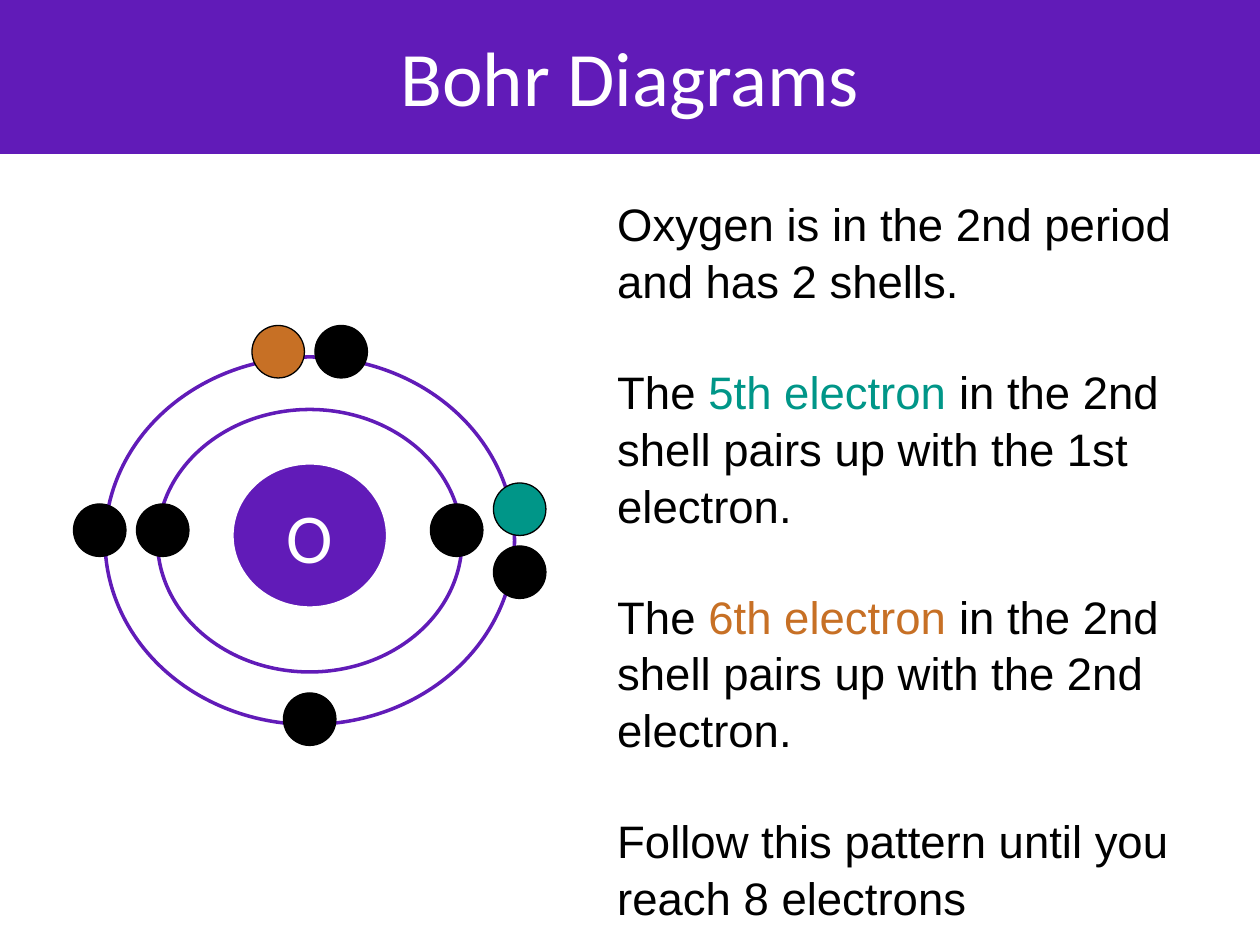
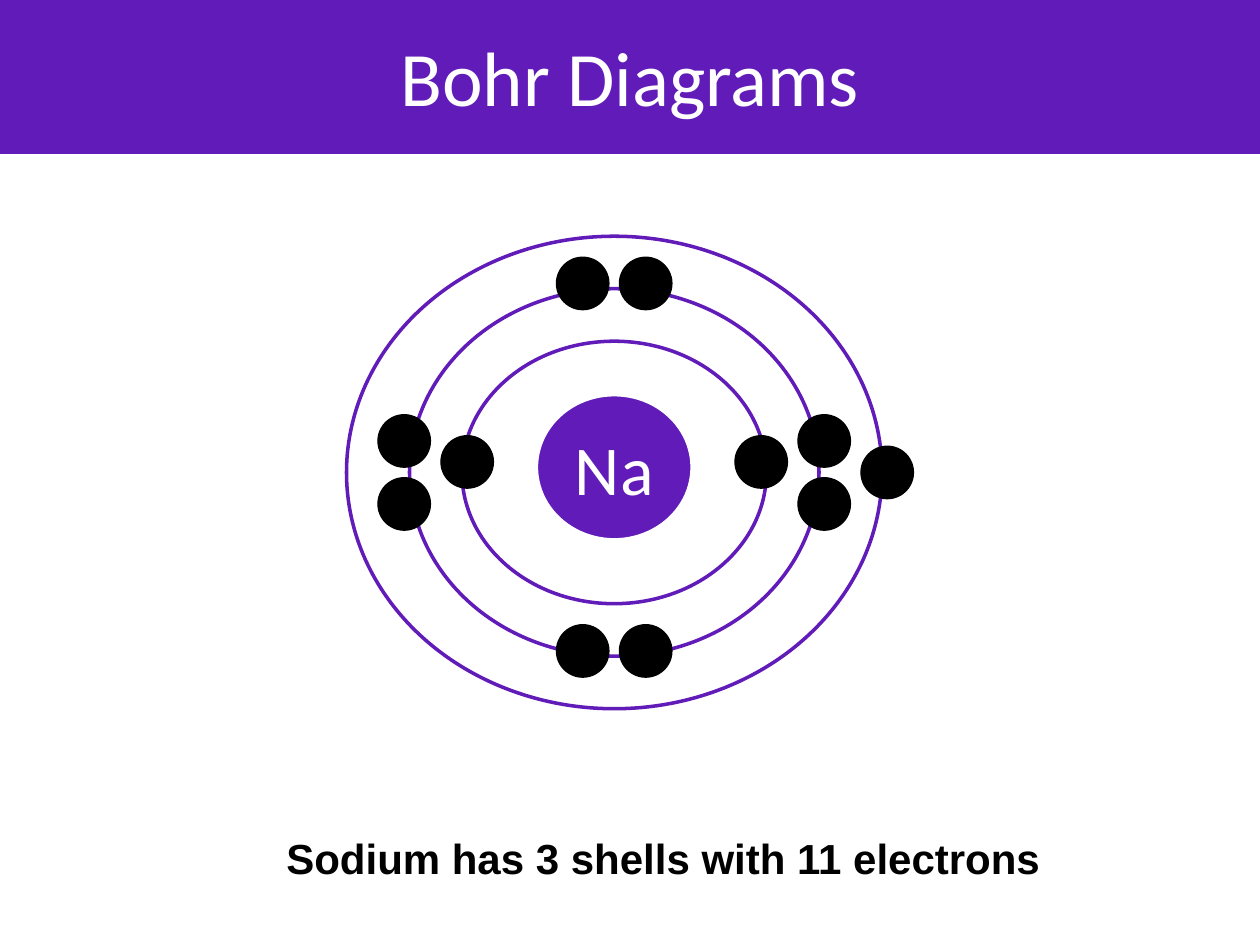
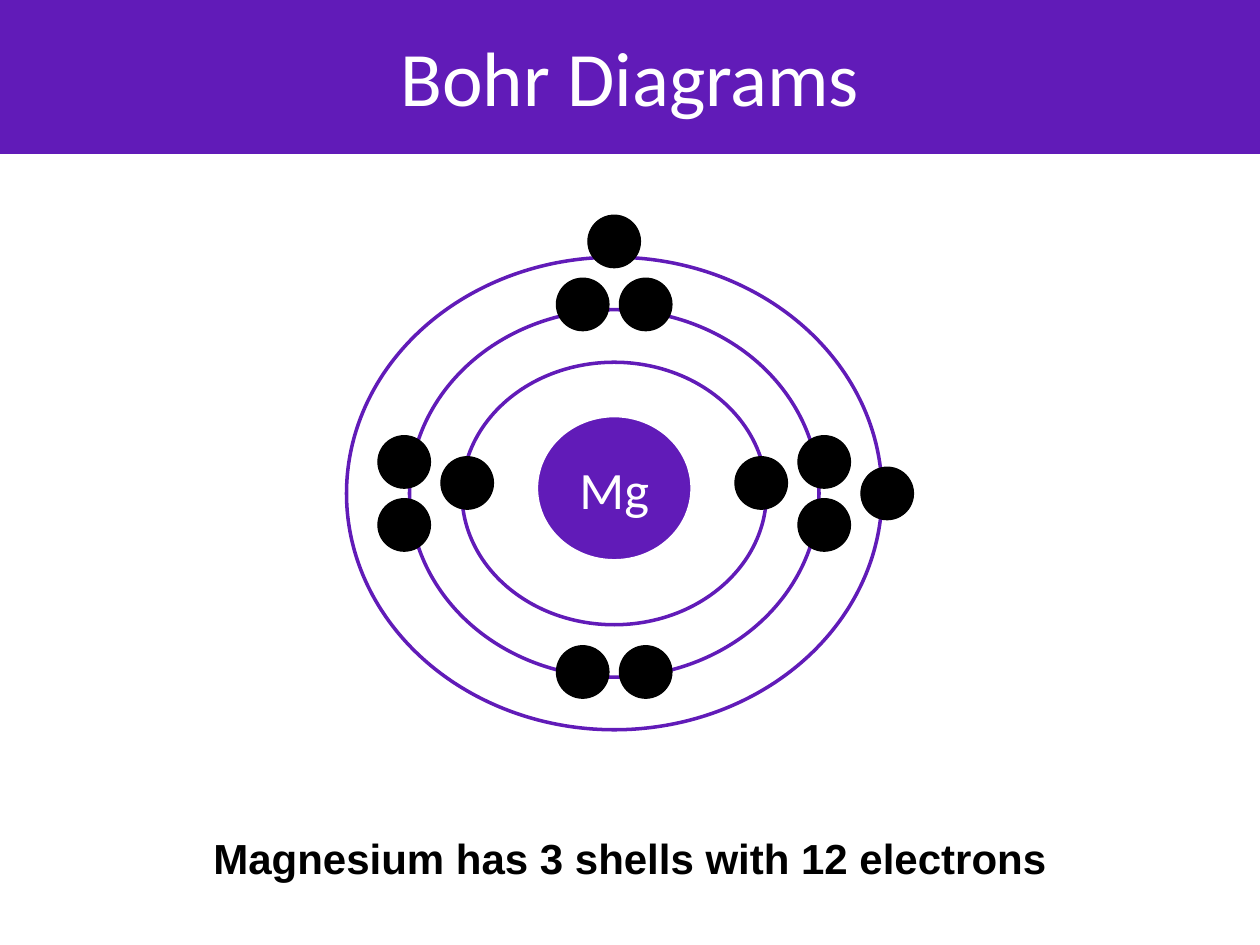
from dataclasses import dataclass
from typing import NamedTuple

from lxml.etree import SubElement
from pptx import Presentation
from pptx.dml.color import RGBColor
from pptx.enum.shapes import MSO_SHAPE
from pptx.enum.text import MSO_ANCHOR, MSO_AUTO_SIZE, PP_ALIGN
from pptx.oxml.ns import qn
from pptx.util import Pt

COLORS = {
    "purple": "611BB8",
    "white": "FFFFFF",
    "black": "000000",
    "teal": "009688",
    "orange": "C77025",
}
TITLE_AND_BODY, TITLE_ONLY = 1, 5
ELECTRON_SIZE = 30
NUCLEUS_LIFT = 3


class Box(NamedTuple):
    left: float
    top: float
    width: float
    height: float


class Span(NamedTuple):
    text: str
    color: str = "black"


class Electron(NamedTuple):
    across: float
    down: float
    color: str = "black"


class Shell(NamedTuple):
    width: float
    height: float


@dataclass
class Atom:
    symbol: str
    symbol_size: float
    center: tuple[float, float]
    shell_count: int
    electrons: list[Electron]


@dataclass
class AtomPage:
    atom: Atom
    caption: str
    caption_box: Box


TITLE_BOX = Box(0, -2, 720, 90)
BODY_BOX = Box(345.5, 102, 361, 417)
SHELLS = [Shell(174, 150), Shell(234, 210), Shell(306, 270)]
NUCLEUS = Shell(90, 84)

FIRST_SHELL = [Electron(84, -6), Electron(-84, -6)]
FULL_SECOND_SHELL = [
    Electron(120, -18), Electron(-18, -108), Electron(-120, -18), Electron(-18, 102),
    Electron(120, 18), Electron(18, -108), Electron(-120, 18), Electron(18, 102),
]
OXYGEN = Atom("O", 40, (177, 309), 2, FIRST_SHELL + [
    Electron(120, -18, "teal"), Electron(-18, -108, "orange"), Electron(-120, -6),
    Electron(0, 102), Electron(120, 18), Electron(18, -108),
])
SODIUM = Atom("Na", 40, (351, 270), 3, FIRST_SHELL + FULL_SECOND_SHELL + [Electron(156, 0)])
MAGNESIUM = Atom("Mg", 30, (351, 282), 3,
                 FIRST_SHELL + FULL_SECOND_SHELL + [Electron(0, -144), Electron(156, 0)])

OXYGEN_TEXT = [
    [Span("Oxygen is in the 2nd period and has 2 shells.")],
    [Span("The "), Span("5th electron", "teal"),
     Span(" in the 2nd shell pairs up with the 1st electron.")],
    [Span("The "), Span("6th electron", "orange"),
     Span(" in the 2nd shell pairs up with the 2nd electron.")],
    [Span("Follow this pattern until you reach 8 electrons")],
]
ATOM_PAGES = [
    AtomPage(SODIUM, "Sodium has 3 shells with 11 electrons", Box(139, 465, 480, 50)),
    AtomPage(MAGNESIUM, "Magnesium has 3 shells with 12 electrons", Box(36, 465, 648, 50)),
]


def rgb(name: str) -> RGBColor:
    return RGBColor.from_string(COLORS[name])


def place(shape, box: Box) -> None:
    shape.left, shape.top, shape.width, shape.height = (Pt(length) for length in box)


def write_text(shape, paragraphs: list[list[Span]], *, size: float, font: str = "Arial",
               bold: bool = False, align=PP_ALIGN.CENTER, anchor=MSO_ANCHOR.MIDDLE,
               margin: float = 7.2, top_margin: float = 7.2, gap: float = 0,
               line_spacing: float = 1.0) -> None:
    frame = shape.text_frame
    frame.word_wrap = True
    frame.auto_size = MSO_AUTO_SIZE.NONE
    frame.vertical_anchor = anchor
    frame.margin_left = frame.margin_right = Pt(7.2)
    frame.margin_top, frame.margin_bottom = Pt(top_margin), Pt(margin)
    for index, spans in enumerate(paragraphs):
        para = frame.add_paragraph() if index else frame.paragraphs[0]
        para.alignment = align
        para.line_spacing = line_spacing
        para.space_before = Pt(gap if index else 0)
        for text, color in spans:
            run = para.add_run()
            run.text = text
            run.font.size = Pt(size)
            run.font.name = font
            run.font.bold = bold
            run.font.color.rgb = rgb(color)


def remove_bullets(shape) -> None:
    for para in shape.text_frame.paragraphs:
        properties = para._p.get_or_add_pPr()
        properties.set("marL", "0")
        properties.set("indent", "0")
        SubElement(properties, qn("a:buNone"))


def add_ellipse(page, center: tuple[float, float], size: Shell, *, fill: str,
                line: str, line_width: float):
    across, down = center
    box = Box(across - size.width / 2, down - size.height / 2, size.width, size.height)
    ellipse = page.shapes.add_shape(MSO_SHAPE.OVAL, *(Pt(length) for length in box))
    ellipse.shadow.inherit = False
    ellipse.fill.solid()
    ellipse.fill.fore_color.rgb = rgb(fill)
    ellipse.line.color.rgb = rgb(line)
    ellipse.line.width = Pt(line_width)
    return ellipse


def draw_atom(page, atom: Atom) -> None:
    across, down = atom.center
    for shell in reversed(SHELLS[:atom.shell_count]):
        add_ellipse(page, atom.center, shell, fill="white", line="purple", line_width=2)
    nucleus = add_ellipse(page, (across, down - NUCLEUS_LIFT), NUCLEUS,
                          fill="purple", line="white", line_width=3)
    write_text(nucleus, [[Span(atom.symbol, "white")]], size=atom.symbol_size,
               font="Calibri", margin=3.6, top_margin=3.6)
    for electron in atom.electrons:
        add_ellipse(page, (across + electron.across, down + electron.down),
                    Shell(ELECTRON_SIZE, ELECTRON_SIZE),
                    fill=electron.color, line="black", line_width=0.75)


def add_page(deck, layout: int):
    page = deck.slides.add_slide(deck.slide_layouts[layout])
    title = page.shapes.title
    place(title, TITLE_BOX)
    title.fill.solid()
    title.fill.fore_color.rgb = rgb("purple")
    write_text(title, [[Span("Bohr Diagrams", "white")]], size=44, font="Calibri")
    return page


def add_oxygen_page(deck) -> None:
    page = add_page(deck, TITLE_AND_BODY)
    draw_atom(page, OXYGEN)
    body = page.placeholders[1]
    place(body, BODY_BOX)
    write_text(body, OXYGEN_TEXT, size=26, align=PP_ALIGN.LEFT, anchor=MSO_ANCHOR.TOP,
               top_margin=9, gap=31, line_spacing=1.04)
    remove_bullets(body)


def add_atom_page(deck, content: AtomPage) -> None:
    page = add_page(deck, TITLE_ONLY)
    draw_atom(page, content.atom)
    caption = page.shapes.add_textbox(*(Pt(length) for length in content.caption_box))
    write_text(caption, [[Span(content.caption)]], size=24, bold=True)


def main() -> None:
    deck = Presentation()
    deck.slide_width, deck.slide_height = Pt(720), Pt(540)
    add_oxygen_page(deck)
    for content in ATOM_PAGES:
        add_atom_page(deck, content)
    deck.save("out.pptx")


if __name__ == "__main__":
    main()
